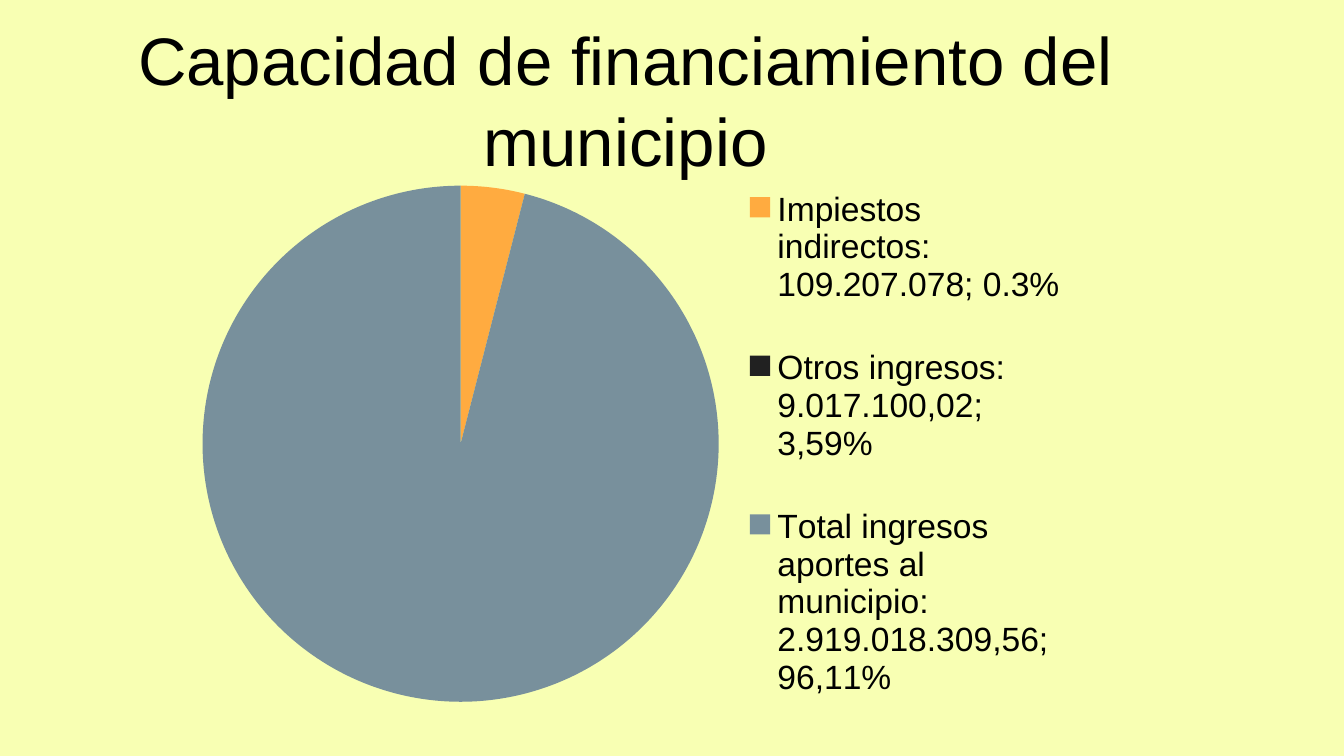
from lxml import etree
from pptx import Presentation
from pptx.chart.data import CategoryChartData
from pptx.dml.color import RGBColor
from pptx.enum.chart import XL_CHART_TYPE, XL_LEGEND_POSITION
from pptx.enum.text import MSO_ANCHOR, PP_ALIGN
from pptx.oxml.ns import qn
from pptx.util import Inches, Pt

# Content
TITLE = "Capacidad de financiamiento del municipio"
SHARES = [  # label, rounded percentage, colour name
    ("Impiestos indirectos: 109.207.078; 0.3%", 4, "orange"),
    ("Otros ingresos: 9.017.100,02; 3,59%", 0, "black"),
    ("Total ingresos aportes al municipio: 2.919.018.309,56; 96,11%", 96, "slate"),
]
COLORS = {
    "background": "F8FFB3",
    "text": "000000",
    "orange": "FFAB40",
    "black": "212121",
    "slate": "78909C",
}
FONT = "Arial"

# Positions: left, top, width, height in inches
TITLE_BOX = (0.01, 0.13, 9.29, 1.22)
CHART_BOX = (1.38, 1.08, 6.67, 4.44)
PIE_BOX = (1.51, 1.38, 3.84, 3.84)
LEGEND_BOX = (5.51, 1.08, 2.45, 4.44)


def color(name):
    return RGBColor.from_string(COLORS[name])


def style_font(font, size):
    font.name = FONT
    font.size = Pt(size)
    font.color.rgb = color("text")


def place_in_chart(parent, box, inner=False):
    """Fix a chart part at a box given in slide inches."""
    left, top, width, height = CHART_BOX
    fractions = {
        "x": (box[0] - left) / width,
        "y": (box[1] - top) / height,
        "w": box[2] / width,
        "h": box[3] / height,
    }
    for old in parent.findall(qn("c:layout")):
        parent.remove(old)
    layout = etree.Element(qn("c:layout"))
    manual = etree.SubElement(layout, qn("c:manualLayout"))
    settings = [("layoutTarget", "inner")] if inner else []
    settings += [("xMode", "edge"), ("yMode", "edge")]
    settings += [(key, f"{value:.3f}") for key, value in fractions.items()]
    for tag, value in settings:
        etree.SubElement(manual, qn(f"c:{tag}")).set("val", value)
    position = parent.find(qn("c:legendPos"))
    if position is None:
        parent.insert(0, layout)
    else:
        position.addnext(layout)


# Widescreen page, 16 by 9
deck = Presentation()
deck.slide_width = Inches(10)
deck.slide_height = Inches(10 * 9 / 16)
page = deck.slides.add_slide(deck.slide_layouts[5])
page.background.fill.solid()
page.background.fill.fore_color.rgb = color("background")

# Title
title = page.shapes.title
title.left, title.top, title.width, title.height = map(Inches, TITLE_BOX)
frame = title.text_frame
frame.text = TITLE
frame.word_wrap = True
frame.vertical_anchor = MSO_ANCHOR.MIDDLE
frame.margin_left = frame.margin_right = Inches(0.1)
frame.margin_top = frame.margin_bottom = Inches(0)
paragraph = frame.paragraphs[0]
paragraph.alignment = PP_ALIGN.CENTER
style_font(paragraph.font, 36)

# Pie chart
data = CategoryChartData()
data.categories = [label for label, _, _ in SHARES]
data.add_series("Series 1", [value for _, value, _ in SHARES])
chart = page.shapes.add_chart(
    XL_CHART_TYPE.PIE, *map(Inches, CHART_BOX), data
).chart
chart.has_title = False
style_font(chart.font, 18)
plot = chart.plots[0]
plot.vary_by_categories = True
for index, (_, _, name) in enumerate(SHARES):
    fill = plot.series[0].points[index].format.fill
    fill.solid()
    fill.fore_color.rgb = color(name)

# Legend
chart.has_legend = True
legend = chart.legend
legend.position = XL_LEGEND_POSITION.RIGHT
legend.include_in_layout = False
style_font(legend.font, 18)

root = chart.element
place_in_chart(root.find(".//" + qn("c:plotArea")), PIE_BOX, inner=True)
place_in_chart(root.find(".//" + qn("c:legend")), LEGEND_BOX)

deck.save("out.pptx")
